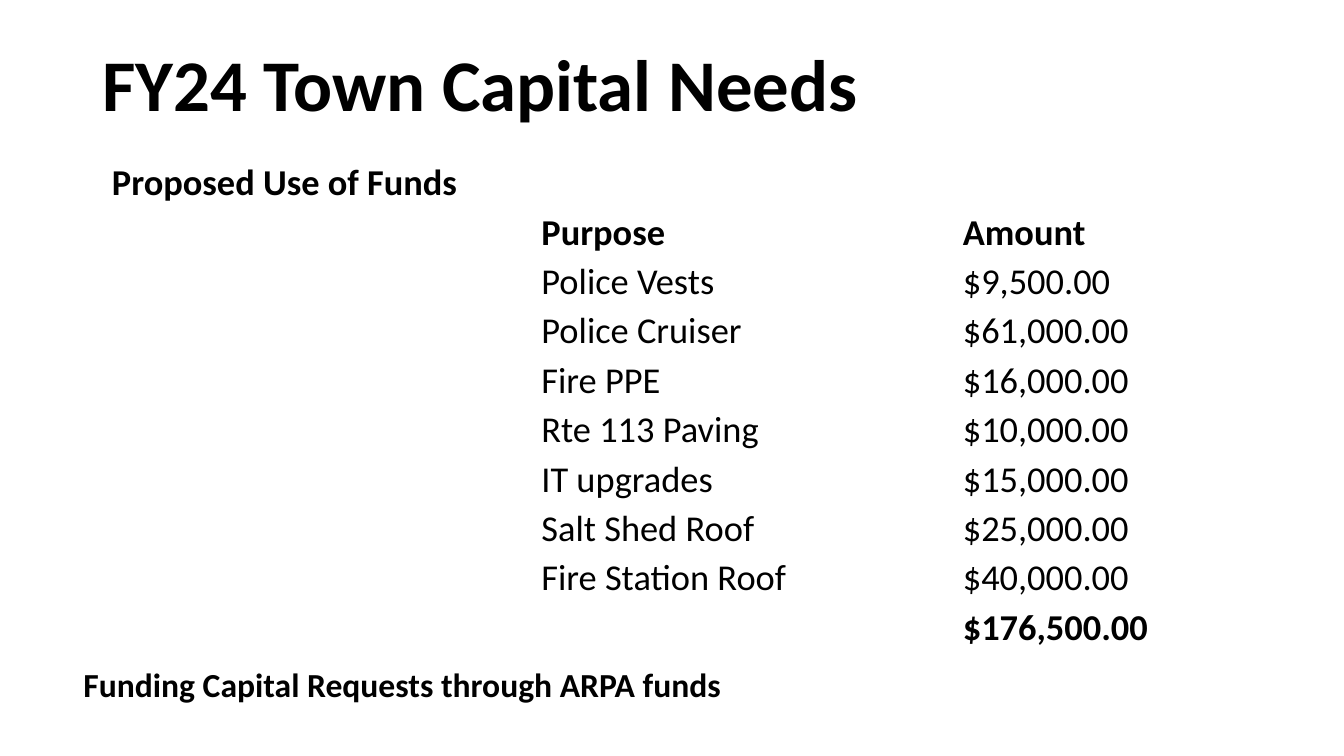
from pptx import Presentation
from pptx.dml.color import RGBColor
from pptx.enum.text import MSO_ANCHOR as Anchor
from pptx.util import Inches, Pt

FONT = "Calibri"
BLACK = "000000"
TABLE_SIZE = 26
TEXTS = [
    ("FY24 Town Capital Needs", 52, (0.92, 0.2, 11.5, 1.34)),
    ("Funding Capital Requests through ARPA funds", 24, (0.73, 6.33, 11.5, 0.96)),
]
FUNDS = [
    ("Proposed Use of Funds", "", ""),
    ("", "Purpose", "Amount"),
    ("", "Police Vests", "$9,500.00"),
    ("", "Police Cruiser", "$61,000.00"),
    ("", "Fire PPE", "$16,000.00"),
    ("", "Rte 113 Paving", "$10,000.00"),
    ("", "IT upgrades", "$15,000.00"),
    ("", "Salt Shed Roof", "$25,000.00"),
    ("", "Fire Station Roof", "$40,000.00"),
    ("", "", "$176,500.00"),
]
BOLD_ROWS = {0, 1, len(FUNDS) - 1}
COLUMN_WIDTHS = [4.26, 4.18, 2.32]
TABLE_LEFT, TABLE_TOP, ROW_HEIGHT = 1.1, 1.55, 0.49


def color(hex_code):
    """Turn a hex string into a colour."""
    return RGBColor.from_string(hex_code)


def style(paragraph, size, bold):
    """Format every run of a paragraph."""
    for run in paragraph.runs:
        run.font.name = FONT
        run.font.size = Pt(size)
        run.font.bold = bold
        run.font.color.rgb = color(BLACK)


def add_text(slide, text, size, box):
    """Add one bold, vertically centred line of text."""
    text_frame = slide.shapes.add_textbox(*map(Inches, box)).text_frame
    text_frame.word_wrap = True
    text_frame.vertical_anchor = Anchor.MIDDLE
    text_frame.text = text
    paragraph = text_frame.paragraphs[0]
    paragraph.line_spacing = 0.9
    paragraph.space_after = Pt(6)
    style(paragraph, size, True)


def add_funds_table(slide):
    """Add the unfilled table of purposes and amounts."""
    table = slide.shapes.add_table(
        len(FUNDS), len(COLUMN_WIDTHS), Inches(TABLE_LEFT), Inches(TABLE_TOP),
        Inches(sum(COLUMN_WIDTHS)), Inches(ROW_HEIGHT * len(FUNDS))).table
    table.first_row = table.horz_banding = False
    for column, width in zip(table.columns, COLUMN_WIDTHS):
        column.width = Inches(width)
    for row_index, values in enumerate(FUNDS):
        table.rows[row_index].height = Inches(ROW_HEIGHT)
        for column_index, value in enumerate(values):
            cell = table.cell(row_index, column_index)
            cell.fill.background()
            cell.vertical_anchor = Anchor.BOTTOM
            cell.margin_left = cell.margin_right = cell.margin_top = Inches(0.01)
            cell.margin_bottom = 0
            cell.text_frame.text = value
            style(cell.text_frame.paragraphs[0], TABLE_SIZE, row_index in BOLD_ROWS)


def main():
    """Build and save the capital needs slide."""
    presentation = Presentation()
    presentation.slide_width = Inches(13.33)
    presentation.slide_height = Inches(7.5)
    slide = presentation.slides.add_slide(presentation.slide_layouts[6])
    add_funds_table(slide)
    for text, size, box in TEXTS:
        add_text(slide, text, size, box)
    presentation.save("out.pptx")


if __name__ == "__main__":
    main()
